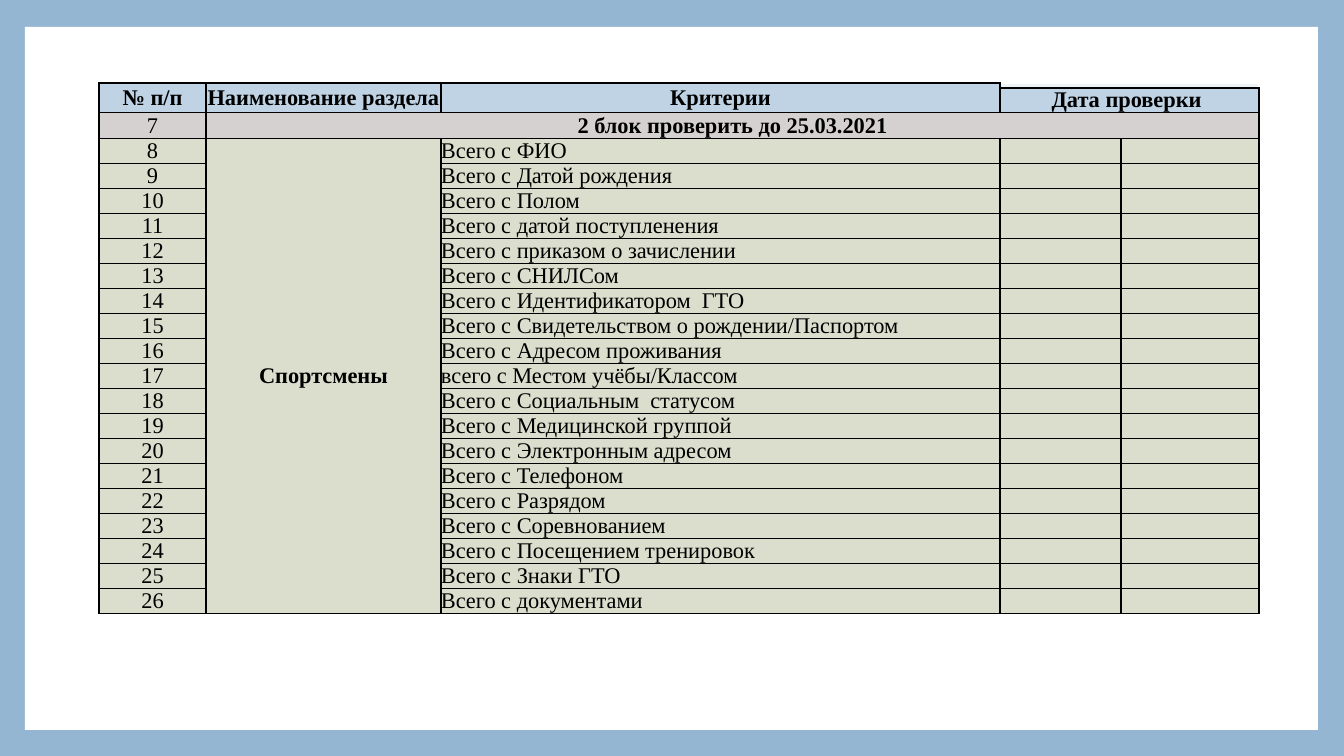
from dataclasses import dataclass

from lxml.etree import SubElement
from pptx import Presentation
from pptx.dml.color import RGBColor
from pptx.enum.shapes import MSO_SHAPE
from pptx.enum.text import MSO_ANCHOR, PP_ALIGN
from pptx.oxml.ns import qn
from pptx.table import Table, _Cell
from pptx.util import Emu, Pt

SLIDE_WIDTH, SLIDE_HEIGHT = 1344, 756
EMU_PER_PX = 12192000 / SLIDE_WIDTH

FRAME_BLUE = RGBColor(0x94, 0xB6, 0xD2)
WHITE = RGBColor(0xFF, 0xFF, 0xFF)
BLACK = RGBColor(0x00, 0x00, 0x00)
HEADER_BLUE = RGBColor(0xBF, 0xD3, 0xE4)
STRIP_BLUE = RGBColor(0xEE, 0xF3, 0xF7)
BLOCK_GREY = RGBColor(0xD5, 0xD1, 0xD1)
ROW_GREEN = RGBColor(0xDB, 0xDD, 0xCD)

FONT = "Times New Roman"
FONT_SIZE = 16
STRIP_FONT_SIZE = 1
COLUMN_WIDTHS = [107, 235, 559, 121, 138]
HEADER_HEIGHTS = [5, 25, 26]
CRITERION_HEIGHT = 25
BLOCK_NUMBER = 7
BLOCK_ROW = 2
FIRST_CRITERION_ROW = 3

CRITERIA = [
    "Всего с ФИО",
    "Всего с Датой рождения",
    "Всего с Полом",
    "Всего с датой поступленения",
    "Всего с приказом о зачислении",
    "Всего с СНИЛСом",
    "Всего с Идентификатором  ГТО",
    "Всего с Свидетельством о рождении/Паспортом",
    "Всего с Адресом проживания",
    "всего с Местом учёбы/Классом",
    "Всего с Социальным  статусом",
    "Всего с Медицинской группой",
    "Всего с Электронным адресом",
    "Всего с Телефоном",
    "Всего с Разрядом",
    "Всего с Соревнованием",
    "Всего с Посещением тренировок",
    "Всего с Знаки ГТО",
    "Всего с документами",
]
LAST_ROW = FIRST_CRITERION_ROW + len(CRITERIA) - 1


@dataclass(frozen=True)
class Entry:
    """Text of a table cell, with the last row and column it spans."""
    row: int
    column: int
    text: str
    last_row: int
    last_column: int
    bold: bool = True
    align: PP_ALIGN = PP_ALIGN.CENTER
    anchor: MSO_ANCHOR = MSO_ANCHOR.MIDDLE


def px(length: int) -> Emu:
    return Emu(round(length * EMU_PER_PX))


def table_entries() -> list[Entry]:
    entries = [
        Entry(0, 0, "№ п/п", 1, 0),
        Entry(0, 1, "Наименование раздела", 1, 1),
        Entry(0, 2, "Критерии", 1, 2),
        Entry(0, 3, "", 0, 4),
        Entry(1, 3, "Дата проверки ", 1, 4),
        Entry(BLOCK_ROW, 0, str(BLOCK_NUMBER), BLOCK_ROW, 0, bold=False),
        Entry(BLOCK_ROW, 1, "2 блок проверить до 25.03.2021", BLOCK_ROW, 4),
        Entry(FIRST_CRITERION_ROW, 1, "Спортсмены", LAST_ROW, 1),
    ]
    for index, criterion in enumerate(CRITERIA):
        row = FIRST_CRITERION_ROW + index
        number = str(BLOCK_NUMBER + 1 + index)
        entries.append(Entry(row, 0, number, row, 0, bold=False))
        entries.append(Entry(row, 2, criterion, row, 2, False,
                             PP_ALIGN.LEFT, MSO_ANCHOR.BOTTOM))
    return entries


def is_strip(row: int, column: int) -> bool:
    """Tell whether the cell is in the thin strip above the date heading."""
    return row == 0 and column >= 3


def row_color(row: int) -> RGBColor:
    if row < BLOCK_ROW:
        return HEADER_BLUE
    return BLOCK_GREY if row == BLOCK_ROW else ROW_GREEN


def add_borders(cell: _Cell, top: RGBColor, right: RGBColor) -> None:
    properties = cell._tc.get_or_add_tcPr()
    sides = {"lnL": BLACK, "lnR": right, "lnT": top, "lnB": BLACK}
    for side, color in sides.items():
        line = SubElement(properties, qn(f"a:{side}"), w=str(Pt(1)))
        solid = SubElement(line, qn("a:solidFill"))
        SubElement(solid, qn("a:srgbClr"), val=str(color))


def format_cell(cell: _Cell, row: int, column: int) -> None:
    strip = is_strip(row, column)
    edge = WHITE if strip else BLACK
    add_borders(cell, top=edge, right=edge)
    cell.fill.solid()
    cell.fill.fore_color.rgb = STRIP_BLUE if strip else row_color(row)
    cell.margin_left = cell.margin_right = 0
    cell.margin_top = cell.margin_bottom = 0
    size = STRIP_FONT_SIZE if strip else FONT_SIZE
    end = SubElement(cell.text_frame.paragraphs[0]._p, qn("a:endParaRPr"),
                     sz=str(size * 100))
    SubElement(end, qn("a:latin"), typeface=FONT)


def write_entry(table: Table, entry: Entry) -> None:
    cell = table.cell(entry.row, entry.column)
    last_cell = table.cell(entry.last_row, entry.last_column)
    if (entry.row, entry.column) != (entry.last_row, entry.last_column):
        cell.merge(last_cell)
    if not entry.text:
        return
    cell.vertical_anchor = entry.anchor
    paragraph = cell.text_frame.paragraphs[0]
    paragraph.text = entry.text
    paragraph.alignment = entry.align
    for run in paragraph.runs:
        run.font.name = FONT
        run.font.size = Pt(FONT_SIZE)
        run.font.bold = entry.bold
        run.font.color.rgb = BLACK


def main() -> None:
    presentation = Presentation()
    presentation.slide_width = px(SLIDE_WIDTH)
    presentation.slide_height = px(SLIDE_HEIGHT)
    slide = presentation.slides.add_slide(presentation.slide_layouts[6])
    slide.background.fill.solid()
    slide.background.fill.fore_color.rgb = FRAME_BLUE

    page = slide.shapes.add_shape(MSO_SHAPE.RECTANGLE,
                                  px(25), px(27), px(1293), px(703))
    page.shadow.inherit = False
    page.fill.solid()
    page.fill.fore_color.rgb = WHITE
    page.line.fill.background()

    heights = HEADER_HEIGHTS + [CRITERION_HEIGHT] * len(CRITERIA)
    checklist = slide.shapes.add_table(
        len(heights), len(COLUMN_WIDTHS), px(99), px(83),
        px(sum(COLUMN_WIDTHS)), px(sum(heights))).table
    checklist.first_row = False
    checklist.horz_banding = False
    for column, width in zip(checklist.columns, COLUMN_WIDTHS):
        column.width = px(width)
    for row_index, height in enumerate(heights):
        checklist.rows[row_index].height = px(height)
        for column_index in range(len(COLUMN_WIDTHS)):
            format_cell(checklist.cell(row_index, column_index),
                        row_index, column_index)
    for entry in table_entries():
        write_entry(checklist, entry)

    presentation.save("out.pptx")


if __name__ == "__main__":
    main()
